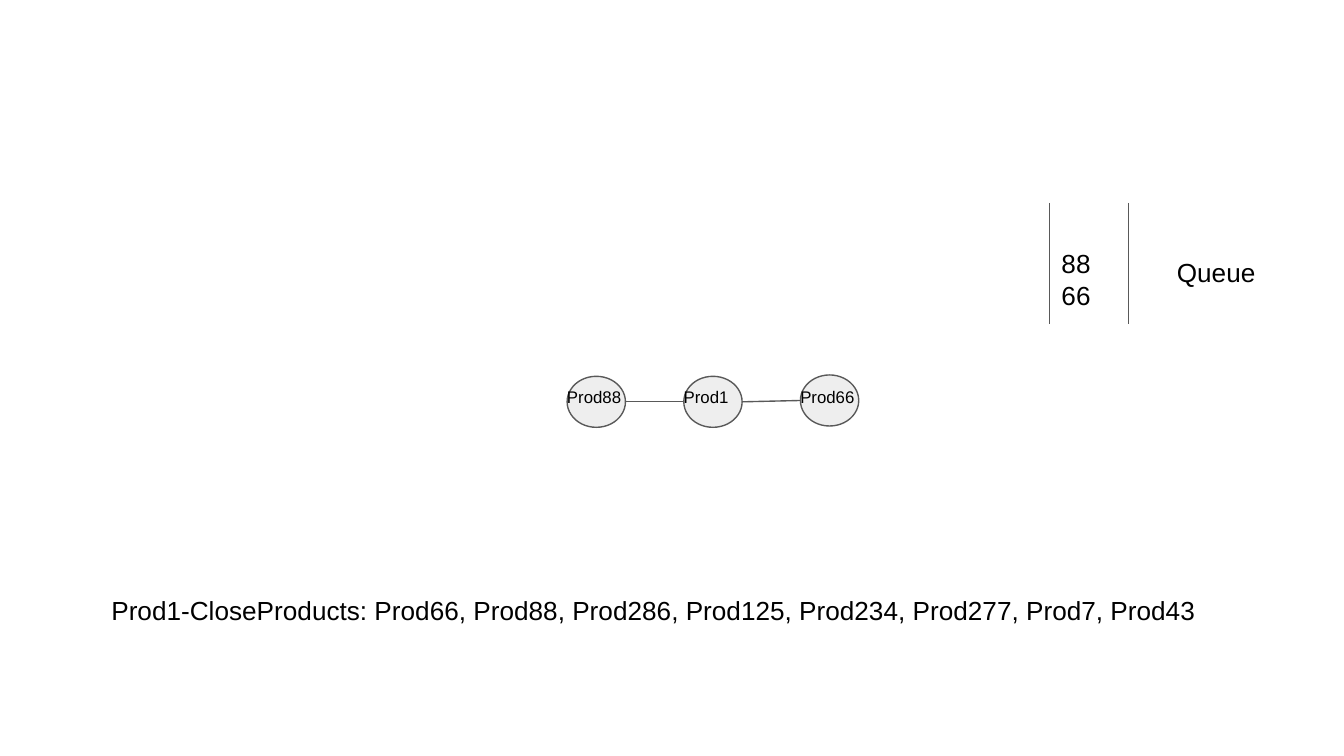
from pptx import Presentation
from pptx.dml.color import RGBColor
from pptx.enum.shapes import MSO_CONNECTOR, MSO_SHAPE
from pptx.oxml.ns import qn
from pptx.util import Inches, Pt
from lxml.etree import SubElement

COLORS = {"text": "000000", "outline": "595959", "node": "EEEEEE"}
FONT = "Arial"
INSET = 0.1
SLIDE_WIDTH = 10
SLIDE_HEIGHT = SLIDE_WIDTH * 9 / 16


def rgb(name):
    return RGBColor.from_string(COLORS[name])


def add_text(slide, box, lines, size):
    frame = slide.shapes.add_textbox(*map(Inches, box)).text_frame
    frame.word_wrap = True
    frame.margin_left = frame.margin_right = Inches(INSET)
    frame.margin_top = frame.margin_bottom = Inches(INSET)
    for i, line in enumerate(lines):
        paragraph = frame.paragraphs[0] if i == 0 else frame.add_paragraph()
        paragraph.text = line
        paragraph.font.name = FONT
        paragraph.font.size = Pt(size)
        paragraph.font.color.rgb = rgb("text")


def add_line(slide, start, end):
    line = slide.shapes.add_connector(
        MSO_CONNECTOR.STRAIGHT, *map(Inches, (*start, *end)))
    line.line.color.rgb = rgb("outline")
    line.line.width = Pt(0.75)
    SubElement(line._element.spPr, qn("a:effectLst"))


def add_node(slide, box):
    node = slide.shapes.add_shape(MSO_SHAPE.OVAL, *map(Inches, box))
    node.shadow.inherit = False
    node.fill.solid()
    node.fill.fore_color.rgb = rgb("node")
    node.line.color.rgb = rgb("outline")
    node.line.width = Pt(0.75)


def add_graph(slide, box, products):
    """Chain of (label, lift) nodes, with nodes and gaps as equal columns."""
    left, top, width, height = box
    column = width / (2 * len(products) - 1)
    previous = None
    for i, (product, lift) in enumerate(products):
        x, y = left + 2 * i * column, top - lift
        middle = y + height / 2
        add_node(slide, (x, y, column, height))
        if previous:
            add_line(slide, previous, (x, middle))
        previous = (x + column, middle)
        add_text(slide, (x - INSET, top, 1.42 * column, height), [product], 9)


def add_queue(slide, box, title, values):
    left, top, width, height = box
    lane = 0.34 * width
    for x in (left, left + lane):
        add_line(slide, (x, top), (x, top + height))
    add_text(slide, (left - 0.01, top + 0.26 * height, 0.36 * width, 0.67 * height),
             values, 14)
    add_text(slide, (left + 0.49 * width, top + 0.33 * height,
                     0.51 * width, 0.42 * height), [title], 14)


def main():
    prs = Presentation()
    prs.slide_width, prs.slide_height = Inches(SLIDE_WIDTH), Inches(SLIDE_HEIGHT)
    slide = prs.slides.add_slide(prs.slide_layouts[6])
    add_graph(slide, (4.22, 2.8, 2.17, 0.38),
              [("Prod88", 0), ("Prod1", 0), ("Prod66", 0.01)])
    add_text(slide, (0.73, 4.32, 8.41, 0.54),
             ["Prod1-CloseProducts: Prod66, Prod88, Prod286, Prod125, "
              "Prod234, Prod277, Prod7, Prod43"], 14)
    add_queue(slide, (7.81, 1.51, 1.73, 0.9), "Queue", ["88", "66"])
    prs.save("out.pptx")


if __name__ == "__main__":
    main()
